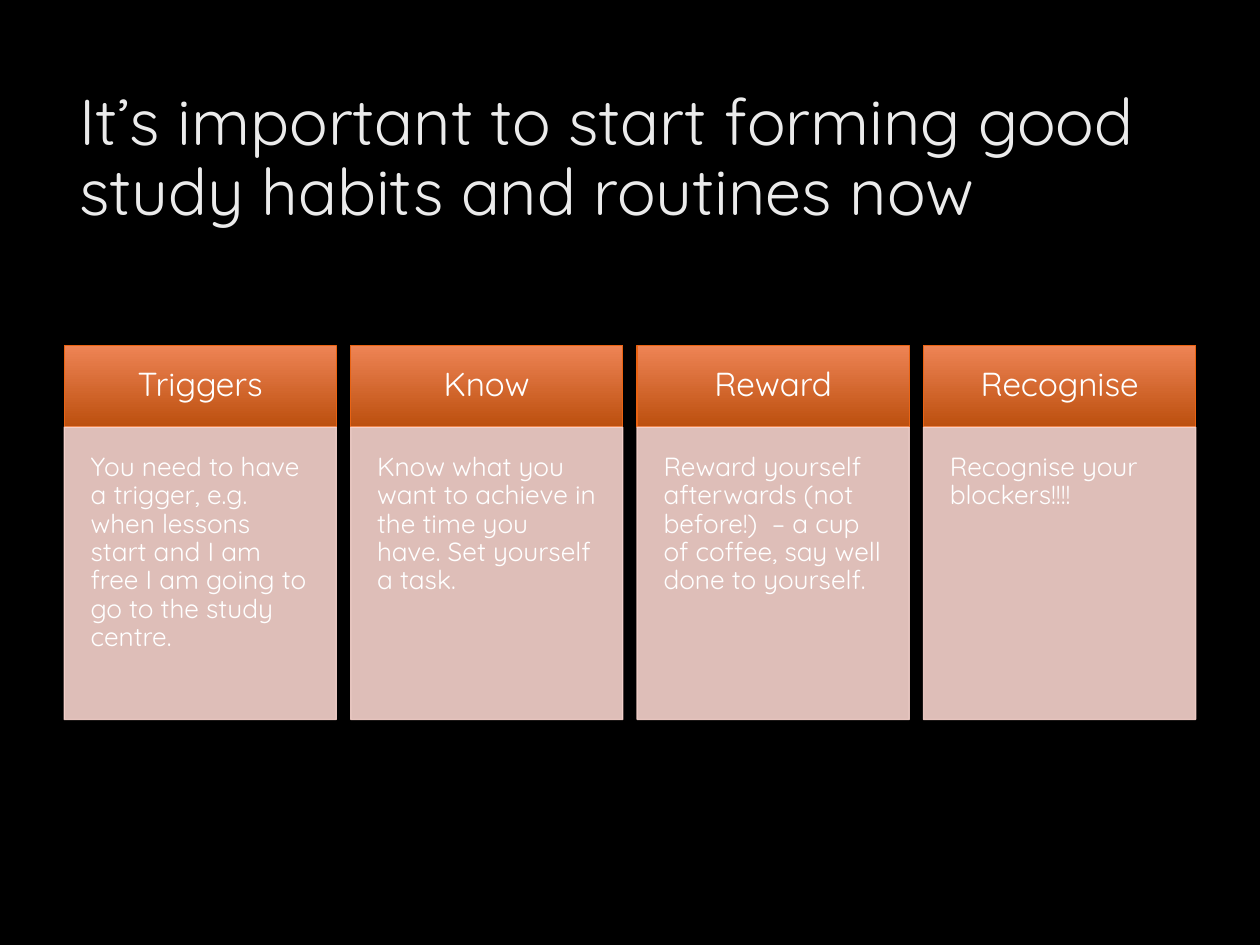
import pptx
import pptx.dml.color
import pptx.enum.shapes
import pptx.enum.text
import pptx.oxml
import pptx.oxml.ns
import pptx.util
from pptx.util import Inches

FONT = "Quicksand"
COLORS = {
    "background": "000000",
    "title": "EBEBEB",
    "text": "FFFFFF",
    "header_top": "EE8455",
    "header_bottom": "BC4F0E",
    "header_line": "EA6312",
    "panel": "F7D3CC",
}
HABITS = [
    ("Triggers", "You need to have a trigger, e.g. when lessons start and I am "
                 "free I am going to go to the study centre."),
    ("Know", "Know what you want to achieve in the time you have. "
             "Set yourself a task."),
    ("Reward", "Reward yourself afterwards (not before!)  – a cup of coffee, "
               "say well done to yourself."),
    ("Recognise", "Recognise your blockers!!!!"),
]
LEFT = pptx.enum.text.PP_ALIGN.LEFT
CENTER = pptx.enum.text.PP_ALIGN.CENTER
TOP = pptx.enum.text.MSO_ANCHOR.TOP
MIDDLE = pptx.enum.text.MSO_ANCHOR.MIDDLE


def rgb(name):
    return pptx.dml.color.RGBColor.from_string(COLORS[name])


def write_text(shape, text, *, size, color="text", align=LEFT, anchor=TOP,
               inset_x=0.1, inset_y=0.05):
    frame = shape.text_frame
    frame.word_wrap = True
    frame.vertical_anchor = anchor
    frame.margin_left = frame.margin_right = Inches(inset_x)
    frame.margin_top = frame.margin_bottom = Inches(inset_y)
    paragraph = frame.paragraphs[0]
    paragraph.alignment = align
    paragraph.line_spacing = 0.9
    run = paragraph.add_run()
    run.text = text
    run.font.name = FONT
    run.font.size = pptx.util.Pt(size)
    run.font.color.rgb = rgb(color)


def add_rectangle(slide, left, top, width, height, line_color):
    shape = slide.shapes.add_shape(
        pptx.enum.shapes.MSO_SHAPE.RECTANGLE, left, top, width, height)
    shape.shadow.inherit = False
    shape.line.color.rgb = rgb(line_color)
    shape.line.width = pptx.util.Pt(0.75)
    return shape


def set_opacity(shape, percent):
    """Apply one opacity to the fill and the outline."""
    for color in shape.element.spPr.iter(pptx.oxml.ns.qn("a:srgbClr")):
        color.append(pptx.oxml.parse_xml(
            f'<a:alpha {pptx.oxml.ns.nsdecls("a")} val="{percent * 1000}"/>'))


def add_title(slide, left, top, width, height):
    box = slide.shapes.add_textbox(left, top, width, height)
    write_text(box, "It’s important to start forming good study habits "
                    "and routines now", size=37, color="title", anchor=MIDDLE)


def add_habit(slide, heading, detail, left, top, width, height):
    header_height = Inches(0.65)

    # Gradient header
    header = add_rectangle(slide, left, top, width, header_height, "header_line")
    header.fill.gradient()
    header.fill.gradient_angle = 270
    for stop, name in zip(header.fill.gradient_stops,
                          ("header_top", "header_bottom")):
        stop.color.rgb = rgb(name)
    write_text(header, heading, size=19, align=CENTER, anchor=MIDDLE,
               inset_x=0.17, inset_y=0.17)

    # Translucent panel
    panel = add_rectangle(slide, left, top + header_height, width,
                          height - header_height, "panel")
    panel.fill.solid()
    panel.fill.fore_color.rgb = rgb("panel")
    set_opacity(panel, 90)
    write_text(panel, detail, size=15, inset_x=0.21, inset_y=0.21)


def add_habits(slide, left, top, width, height):
    column_width = Inches(2.16)
    pitch = (width - column_width) // (len(HABITS) - 1)
    for index, (heading, detail) in enumerate(HABITS):
        add_habit(slide, heading, detail, left + index * pitch, top,
                  column_width, height)


def main():
    presentation = pptx.Presentation()
    presentation.slide_width = Inches(10)
    presentation.slide_height = Inches(7.5)
    slide = presentation.slides.add_slide(presentation.slide_layouts[6])
    slide.background.fill.solid()
    slide.background.fill.fore_color.rgb = rgb("background")

    add_title(slide, Inches(0.53), Inches(0.5), Inches(8.97), Inches(1.53))
    add_habits(slide, Inches(0.51), Inches(2.74), Inches(8.98), Inches(2.97))
    presentation.save("out.pptx")


if __name__ == "__main__":
    main()
